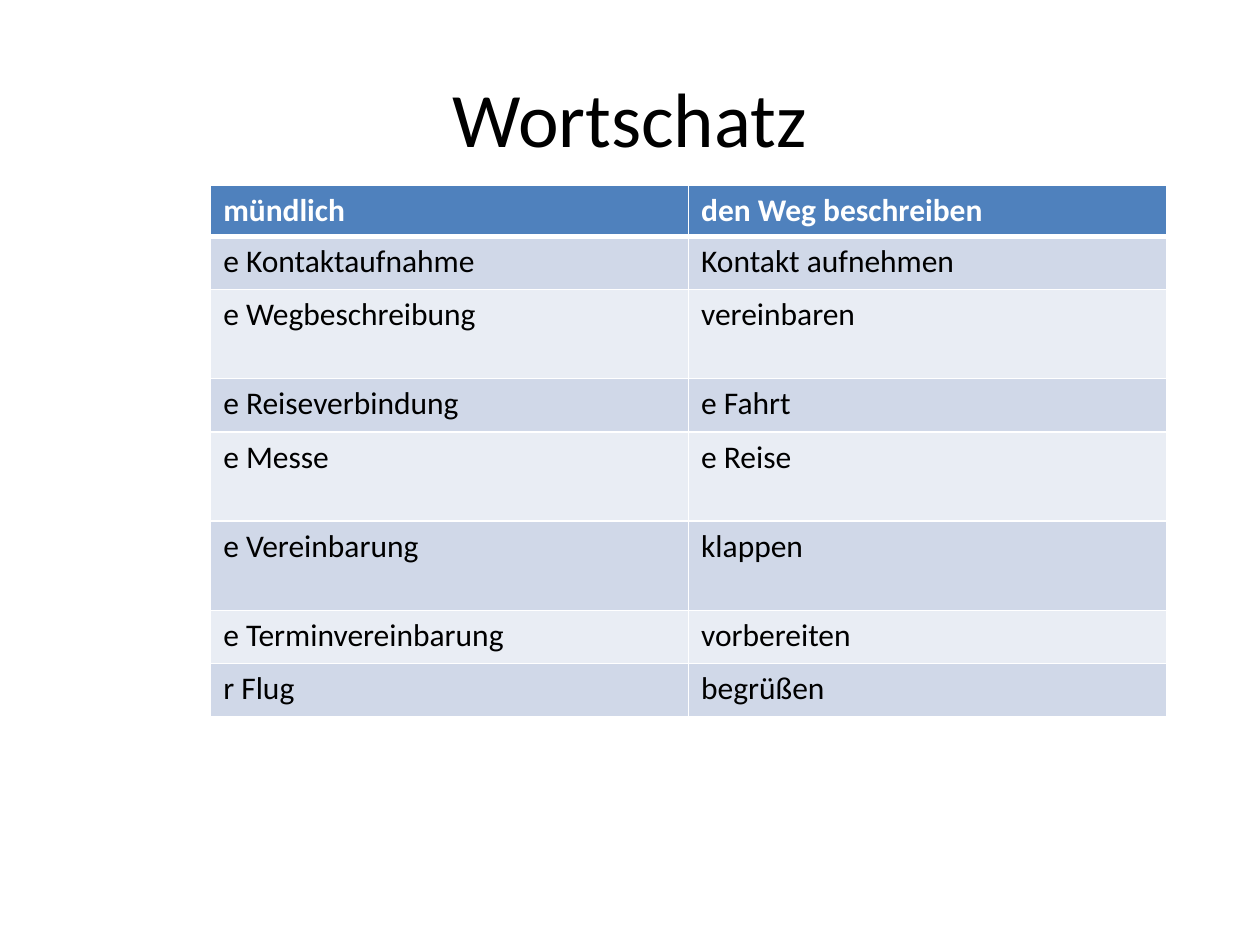
from lxml.etree import SubElement as Sub
from pptx import Presentation
from pptx.dml.color import RGBColor as RGB
from pptx.enum.text import MSO_ANCHOR as Anchor, PP_ALIGN as Align
from pptx.oxml.ns import qn
from pptx.util import Pt

BLACK = RGB(0x00, 0x00, 0x00)
WHITE = RGB(0xFF, 0xFF, 0xFF)
BLUE = RGB(0x4F, 0x81, 0xBD)
BANDS = RGB(0xE9, 0xED, 0xF4), RGB(0xD0, 0xD8, 0xE8)
FONT = "Calibri"

HEAD, LOW, TALL = 29.2, 30.4, 51
COL = 273.1
# Row height, left word, right word
ROWS = [
    (HEAD, "mündlich", "den Weg beschreiben"),
    (LOW, "e Kontaktaufnahme", "Kontakt aufnehmen"),
    (TALL, "e Wegbeschreibung", "vereinbaren"),
    (LOW, "e Reiseverbindung", "e Fahrt"),
    (TALL, "e Messe", "e Reise"),
    (TALL, "e Vereinbarung", "klappen"),
    (LOW, "e Terminvereinbarung", "vorbereiten"),
    (LOW, "r Flug", "begrüßen"),
]


def style(para, size, color, bold=False):
    font = para.font
    font.name, font.size, font.bold = FONT, Pt(size), bold
    font.color.rgb = color


def add_title(slide, text):
    title = slide.shapes.title
    title.left, title.top = Pt(36), Pt(21.6)
    title.width, title.height = Pt(648), Pt(90)
    frame = title.text_frame
    frame.text = text
    frame.vertical_anchor = Anchor.MIDDLE
    para = frame.paragraphs[0]
    para.alignment = Align.CENTER
    style(para, 44, BLACK)


def add_edge(cell, side, width):
    props = cell._tc.get_or_add_tcPr()
    line = Sub(props, qn(f"a:ln{side}"), w=str(Pt(width)))
    fill = Sub(line, qn("a:solidFill"))
    Sub(fill, qn("a:srgbClr"), val=str(WHITE))


def fill_cell(cell, text, row):
    head = row == 0
    # Borders come before the fill in the cell properties
    for side in "LRTB":
        thick = (head and side == "B") or (row == 1 and side == "T")
        add_edge(cell, side, 3 if thick else 1)
    cell.fill.solid()
    cell.fill.fore_color.rgb = BLUE if head else BANDS[row % 2]
    cell.text = text
    style(cell.text_frame.paragraphs[0], 18, WHITE if head else BLACK, head)


def add_words(slide):
    total = sum(height for height, *_ in ROWS)
    frame = slide.shapes.add_table(
        len(ROWS), 2, Pt(120.4), Pt(105.8), Pt(2 * COL), Pt(total))
    table = frame.table
    for col in table.columns:
        col.width = Pt(COL)
    for row, (height, *words) in enumerate(ROWS):
        table.rows[row].height = Pt(height)
        for col, word in enumerate(words):
            fill_cell(table.cell(row, col), word, row)


def main():
    deck = Presentation()
    deck.slide_width, deck.slide_height = Pt(720), Pt(540)
    # Title-only layout
    slide = deck.slides.add_slide(deck.slide_layouts[5])
    add_title(slide, "Wortschatz")
    add_words(slide)
    deck.save("out.pptx")


if __name__ == "__main__":
    main()
